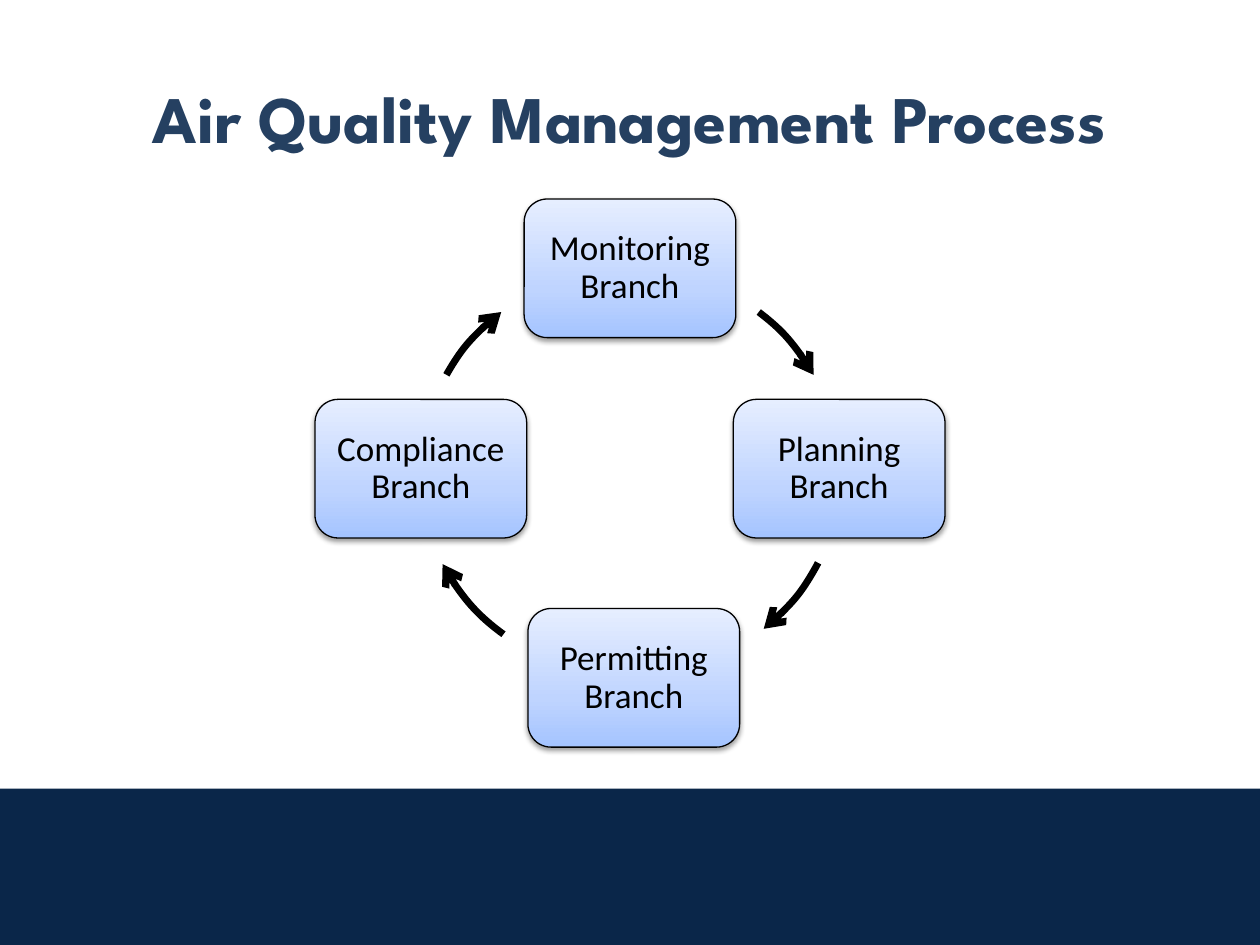
from copy import deepcopy

from lxml import etree
from pptx import Presentation
from pptx.dml.color import RGBColor
from pptx.enum.shapes import MSO_SHAPE
from pptx.enum.text import MSO_ANCHOR, PP_ALIGN
from pptx.oxml.ns import qn
from pptx.util import Inches, Pt

NAVY = RGBColor(0x0A, 0x26, 0x49)
TITLE_BLUE = RGBColor(0x25, 0x40, 0x61)
BLACK = RGBColor(0, 0, 0)
WHITE = RGBColor(0xFF, 0xFF, 0xFF)
GRADIENT = [
    (0, RGBColor(0xA4, 0xC4, 0xFF)),
    (0.35, RGBColor(0xBF, 0xD4, 0xFF)),
    (1, RGBColor(0xE6, 0xEE, 0xFF)),
]
RECTANGLE, ROUNDED, ARC = MSO_SHAPE.RECTANGLE, MSO_SHAPE.ROUNDED_RECTANGLE, MSO_SHAPE.ARC
CENTER, MIDDLE = PP_ALIGN.CENTER, MSO_ANCHOR.MIDDLE
TITLE_ONLY = 5
COLUMNS, ROWS = 100, 75
BRANCH_SIZE = (16.8, 11)
ARC_DIAMETER = 32.9

BRANCHES = [
    ("Monitoring Branch", 41.6, 15.8),
    ("Planning Branch", 58.2, 31.7),
    ("Permitting Branch", 41.9, 48.3),
    ("Compliance Branch", 25, 31.7),
]
ARROWS = [
    (33.8, 21.4, 307.3, 330.5),
    (33.9, 20.6, 27.6, 51.4),
    (33.2, 20.6, 126.1, 152),
    (33.3, 21.4, 209.5, 232.7),
]


class ProcessSlide:
    """Draws the elements of a process slide on a grid in one style."""

    def __init__(self, deck):
        self.slide = deck.slides.add_slide(deck.slide_layouts[TITLE_ONLY])
        self.column = deck.slide_width / COLUMNS
        self.row = deck.slide_height / ROWS
        background = self.slide.background.fill
        background.solid()
        background.fore_color.rgb = WHITE

    def box(self, left, top, width, height):
        return (round(left * self.column), round(top * self.row),
                round(width * self.column), round(height * self.row))

    def shape(self, kind, *place):
        shape = self.slide.shapes.add_shape(kind, *self.box(*place))
        shape.shadow.inherit = False
        return shape

    def outline(self, shape, width):
        shape.line.color.rgb = BLACK
        shape.line.width = Pt(width)

    def label(self, shape, text, color, frame_format, paragraph_format, font_format):
        frame = shape.text_frame
        frame.text = text
        paragraph = frame.paragraphs[0]
        font = paragraph.runs[0].font
        for target, values in ((frame, frame_format), (paragraph, paragraph_format),
                               (font, font_format)):
            for name, value in values.items():
                setattr(target, name, value)
        font.color.rgb = color

    def title(self, text, *place):
        title = self.slide.shapes.title
        title.left, title.top, title.width, title.height = self.box(*place)
        self.label(title, text, TITLE_BLUE, {"vertical_anchor": MIDDLE}, {"alignment": CENTER},
                   {"name": "League Spartan", "size": Pt(38), "bold": True})

    def band(self, *place):
        band = self.shape(RECTANGLE, *place)
        band.fill.solid()
        band.fill.fore_color.rgb = NAVY
        band.line.fill.background()

    def branch(self, text, left, top):
        branch = self.shape(ROUNDED, left, top, *BRANCH_SIZE)
        self.outline(branch, 0.75)
        self.shade(branch)
        self.drop_shadow(branch)
        inset = Inches(0.08)
        self.label(branch, text, BLACK,
                   {"word_wrap": True, "vertical_anchor": MIDDLE, "margin_left": inset,
                    "margin_top": inset, "margin_right": inset, "margin_bottom": inset},
                   {"alignment": CENTER, "line_spacing": 0.9, "space_after": Pt(7)},
                   {"name": "Calibri", "size": Pt(20)})

    def shade(self, shape):
        shape.fill.gradient()
        shape.fill.gradient_angle = 90
        stops = shape.element.spPr.find(f".//{qn('a:gsLst')}")
        stops.append(deepcopy(stops[0]))
        for stop, (position, color) in zip(shape.fill.gradient_stops, GRADIENT):
            stop.position = position
            stop.color.rgb = color

    def drop_shadow(self, shape):
        effects = shape.element.spPr.find(qn("a:effectLst"))
        shadow = etree.SubElement(effects, qn("a:outerShdw"), blurRad=str(Pt(3.1)),
                                  dist=str(Pt(1.6)), dir="5400000", rotWithShape="0")
        color = etree.SubElement(shadow, qn("a:srgbClr"), val=str(BLACK))
        etree.SubElement(color, qn("a:alpha"), val="38000")

    def arrow(self, left, top, start, end):
        arrow = self.shape(ARC, left, top, ARC_DIAMETER, ARC_DIAMETER)
        for index, degrees in enumerate((start, end)):
            arrow.adjustments[index] = degrees * 0.6
        arrow.fill.background()
        self.outline(arrow, 4)
        line = arrow.element.spPr.find(qn("a:ln"))
        etree.SubElement(line, qn("a:tailEnd"), type="arrow")


def main():
    deck = Presentation()
    deck.slide_width, deck.slide_height = Inches(10), Inches(7.5)
    process = ProcessSlide(deck)
    process.band(0, 62.6, COLUMNS, 12.4)
    process.title("Air Quality Management Process", 5, 3, 90, 12.5)
    for branch, arrow in zip(BRANCHES, ARROWS):
        process.branch(*branch)
        process.arrow(*arrow)
    deck.save("out.pptx")


if __name__ == "__main__":
    main()
